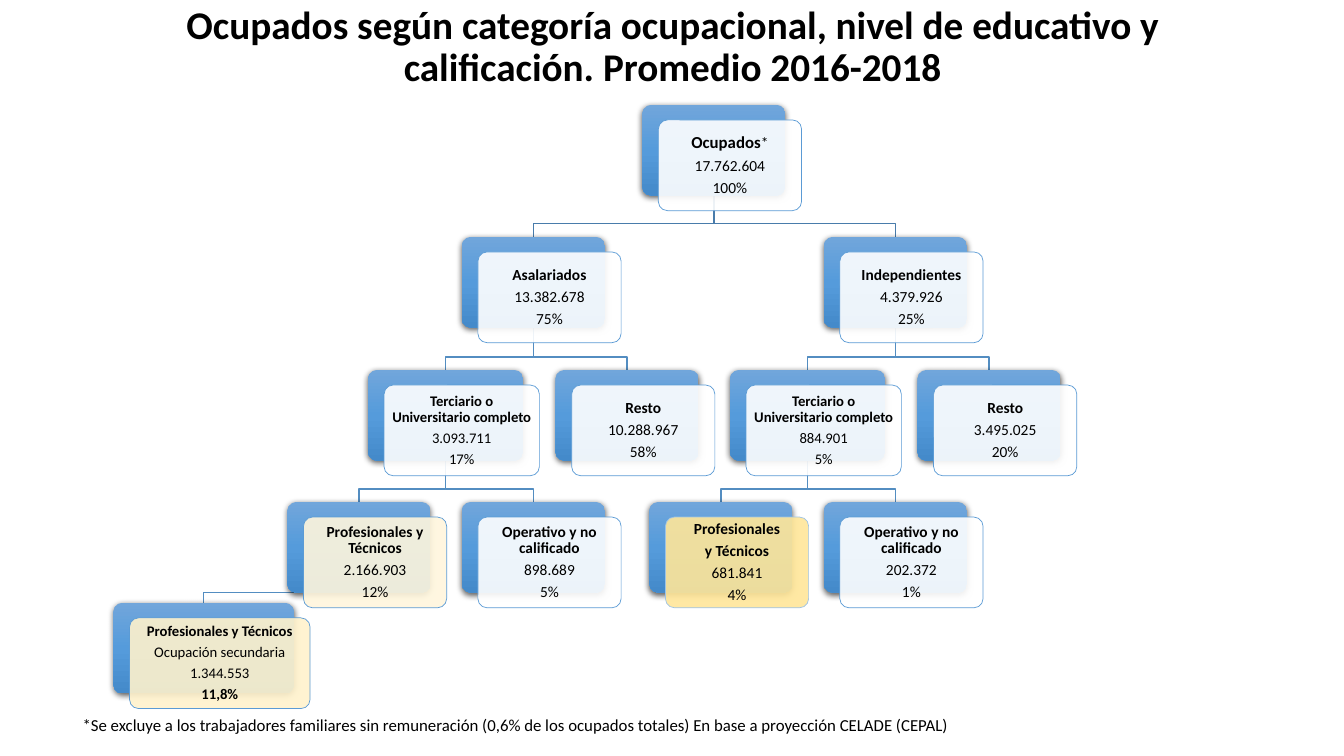
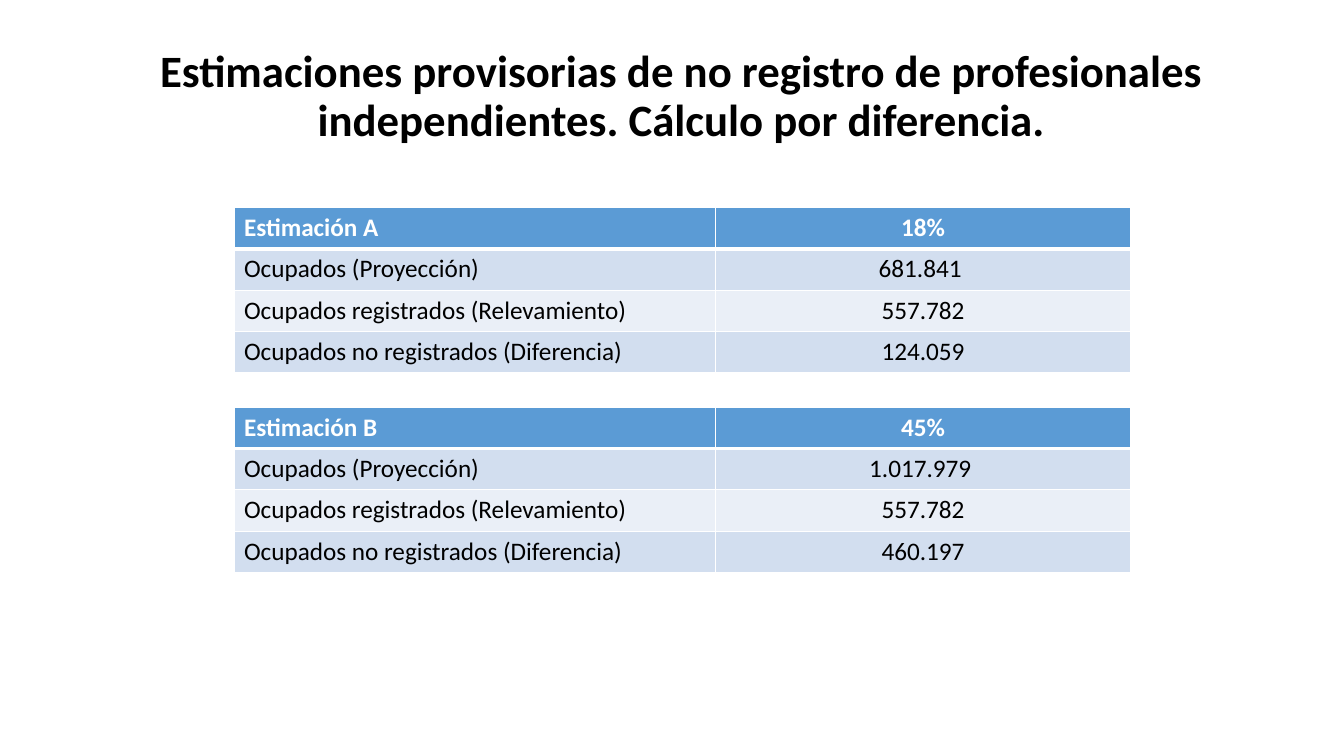
"""Build two slides on employed people: an occupation tree and two estimate tables."""
from copy import deepcopy
from typing import NamedTuple

from lxml import etree
from pptx import Presentation
from pptx import util as u
from pptx.dml.color import RGBColor
from pptx.enum import shapes, text
from pptx.oxml.ns import qn

FONT = "Calibri"
BLACK = RGBColor(0x00, 0x00, 0x00)
WHITE = RGBColor(0xFF, 0xFF, 0xFF)
BLUE = RGBColor(0x5B, 0x9B, 0xD5)
PALE_BLUE = RGBColor(0x9D, 0xC3, 0xE6)
BAND_DARK = RGBColor(0xD2, 0xDE, 0xEF)
BAND_LIGHT = RGBColor(0xEA, 0xEF, 0xF7)
CREAM = RGBColor(0xFF, 0xF6, 0xDD)
SAND = RGBColor(0xFF, 0xF2, 0xCC)
GOLD = RGBColor(0xFF, 0xE6, 0x99)
TOP_BRANCH = RGBColor(0x49, 0x7C, 0xAB)
BRANCH = RGBColor(0x53, 0x8D, 0xC1)
BACK_STOPS = (
    (0, RGBColor(0x71, 0xA6, 0xDB)),
    (0.5, RGBColor(0x55, 0x9B, 0xDB)),
    (1, RGBColor(0x44, 0x8A, 0xCA)),
)

LEVELS = (1.04, 2.35, 3.67, 4.98, 5.98)
BOX_HEIGHT = 0.9
CARD_SHIFT = (0.16, 0.15)
BEND_GAP = 0.13


class Group(NamedTuple):
    parent: int | None
    level: int
    center: float
    headings: tuple
    figures: tuple
    size: float = 11
    width: float = 1.42
    tint: RGBColor = WHITE
    edge: RGBColor = BLUE
    mark: str = ""
    closing: tuple = ()

    @property
    def top(self):
        return LEVELS[self.level]

    @property
    def bottom(self):
        return self.top + BOX_HEIGHT


TERTIARY = ("Terciario o Universitario completo",)
SKILLED = ("Profesionales y Técnicos",)
UNSKILLED = ("Operativo y no calificado",)
GROUPS = (
    Group(None, 0, 7.08, ("Ocupados",), ("17.762.604", "100%"), mark="*"),
    Group(0, 1, 5.29, ("Asalariados",), ("13.382.678", "75%")),
    Group(0, 1, 8.88, ("Independientes",), ("4.379.926", "25%")),
    Group(1, 2, 4.42, TERTIARY, ("3.093.711", "17%"), 10.5, 1.54),
    Group(1, 2, 6.22, ("Resto",), ("10.288.967", "58%")),
    Group(2, 2, 8.01, TERTIARY, ("884.901", "5%"), 10.5, 1.54),
    Group(2, 2, 9.81, ("Resto",), ("3.495.025", "20%")),
    Group(3, 3, 3.56, SKILLED, ("2.166.903", "12%"), tint=CREAM),
    Group(3, 3, 5.29, UNSKILLED, ("898.689", "5%")),
    Group(5, 3, 7.15, ("Profesionales", "y Técnicos"), ("681.841", "4%"),
          tint=GOLD, edge=PALE_BLUE),
    Group(5, 3, 8.88, UNSKILLED, ("202.372", "1%")),
    Group(7, 4, 2.02, SKILLED, ("Ocupación secundaria", "1.344.553"), 10.5, 1.79,
          SAND, closing=("11,8%",)),
)

ESTIMATE_LABELS = (
    "Ocupados (Proyección)",
    "Ocupados registrados (Relevamiento)",
    "Ocupados no registrados (Diferencia)",
)
ESTIMATES = (
    (2.06, ("Estimación A", "18%"), ("681.841 ", "557.782", "124.059")),
    (4.04, ("Estimación B", "45%"), ("1.017.979 ", "557.782", "460.197")),
)


class Deck:
    """Hold the shared style and the current slide."""

    def __init__(self):
        self.show = Presentation()
        self.show.slide_width = u.Inches(13.33)
        self.show.slide_height = u.Inches(7.5)
        self.slide = None

    def new_slide(self):
        """Start a blank slide."""
        self.slide = self.show.slides.add_slide(self.show.slide_layouts[6])

    def style(self, paragraph, size, bold=False, color=BLACK):
        """Format every run of a paragraph."""
        for run in paragraph.runs:
            run.font.name = FONT
            run.font.size = u.Pt(size)
            run.font.bold = bold
            run.font.color.rgb = color

    def label(self, place, wording, size):
        """Add a wrapped text box and return it."""
        box = self.slide.shapes.add_textbox(*map(u.Inches, place))
        box.text_frame.word_wrap = True
        box.text_frame.text = wording
        self.style(box.text_frame.paragraphs[0], size)
        return box

    def title(self, left, top, wording, size):
        """Add the centred bold heading."""
        frame = self.label((left, top, 11.5, 1.45), wording, size).text_frame
        frame.vertical_anchor = text.MSO_ANCHOR.MIDDLE
        heading = frame.paragraphs[0]
        heading.alignment = text.PP_ALIGN.CENTER
        heading.line_spacing = 0.9
        self.style(heading, size, True)

    def branch(self, parent, child):
        """Draw the bent line from a group to its subgroup."""
        bend = max(parent.bottom, child.top - BEND_GAP)
        points = [(u.Inches(x), u.Inches(y)) for x, y in (
            (parent.center, parent.bottom), (parent.center, bend),
            (child.center, bend), (child.center, child.top))]
        pen = self.slide.shapes.build_freeform(*points[0])
        pen.add_line_segments(points[1:], close=False)
        line = pen.convert_to_shape()
        line.shadow.inherit = False
        line.fill.background()
        line.line.color.rgb = BRANCH if parent.level else TOP_BRANCH
        line.line.width = u.Pt(1)

    def rounded(self, left, top, width):
        """Add a rounded box without shadow."""
        box = self.slide.shapes.add_shape(
            shapes.MSO_SHAPE.ROUNDED_RECTANGLE,
            *map(u.Inches, (left, top, width, BOX_HEIGHT)))
        box.adjustments[0] = 0.1
        box.shadow.inherit = False
        return box

    def backing(self, left, top, width):
        """Add the shaded box behind a card."""
        back = self.rounded(left, top, width)
        back.line.fill.background()
        back.fill.gradient()
        back.fill.gradient_angle = 270
        properties = back._element.spPr
        stops = properties.find(".//" + qn("a:gsLst"))
        stops.insert(1, deepcopy(stops[0]))
        for stop, (position, color) in zip(back.fill.gradient_stops, BACK_STOPS):
            stop.position = position
            stop.color.rgb = color
        shadow = etree.SubElement(
            properties.find(qn("a:effectLst")), qn("a:outerShdw"),
            blurRad="57150", dist="19050", dir="5400000", algn="ctr", rotWithShape="0")
        black = etree.SubElement(shadow, qn("a:srgbClr"), val=str(BLACK))
        etree.SubElement(black, qn("a:alpha"), val="63000")

    def group(self, group):
        """Add a backing box and the card with the group's figures."""
        left = group.center - group.width / 2
        self.backing(left, group.top, group.width)
        card = self.rounded(left + CARD_SHIFT[0], group.top + CARD_SHIFT[1], group.width)
        card.fill.solid()
        card.fill.fore_color.rgb = group.tint
        tint = card._element.spPr.find(qn("a:solidFill"))[0]
        etree.SubElement(tint, qn("a:alpha"), val="90000")
        card.line.color.rgb = group.edge
        card.line.width = u.Pt(0.5)
        self.card_text(card.text_frame, group)

    def card_text(self, frame, group):
        """Write headings in bold and figures in regular weight."""
        frame.word_wrap = True
        frame.vertical_anchor = text.MSO_ANCHOR.MIDDLE
        frame.margin_left = frame.margin_right = u.Inches(0.05)
        frame.margin_top = frame.margin_bottom = u.Inches(0.05)
        frame.text = "\n".join(group.headings + group.figures + group.closing)
        regular = range(len(group.headings), len(group.headings + group.figures))
        for index, paragraph in enumerate(frame.paragraphs):
            paragraph.alignment = text.PP_ALIGN.CENTER
            paragraph.line_spacing = 0.9
            paragraph.space_after = u.Pt(0.35 * group.size)
            self.style(paragraph, group.size, index not in regular)
        if group.mark:
            heading = frame.paragraphs[0]
            heading.add_run().text = group.mark
            self.style(heading, group.size)
            heading.runs[0].font.size = u.Pt(12)
            heading.runs[0].font.bold = True

    def borders(self, cell, bottom):
        """Draw white cell borders."""
        properties = cell._tc.get_or_add_tcPr()
        for side, points in (("L", 1), ("R", 1), ("T", 1), ("B", bottom)):
            edge = etree.SubElement(properties, qn("a:ln" + side), w=str(u.Pt(points)))
            fill = etree.SubElement(edge, qn("a:solidFill"))
            etree.SubElement(fill, qn("a:srgbClr"), val=str(WHITE))

    def estimate(self, top, header, values):
        """Add a two-column table with a blue header and banded rows."""
        rows = [header, *zip(ESTIMATE_LABELS, values)]
        row_height = 0.41
        table = self.slide.shapes.add_table(
            len(rows), 2, u.Inches(2.32), u.Inches(top),
            u.Inches(8.89), u.Inches(row_height * len(rows))).table
        for column, width in zip(table.columns, (4.78, 4.11)):
            column.width = u.Inches(width)
        for index, entries in enumerate(rows):
            is_header = index == 0
            band = BLUE if is_header else (BAND_LIGHT, BAND_DARK)[index % 2]
            table.rows[index].height = u.Inches(row_height)
            for column, entry in enumerate(entries):
                cell = table.cell(index, column)
                self.borders(cell, 3 if is_header else 1)
                cell.fill.solid()
                cell.fill.fore_color.rgb = band
                cell.text_frame.text = entry
                paragraph = cell.text_frame.paragraphs[0]
                if column:
                    paragraph.alignment = text.PP_ALIGN.CENTER
                self.style(paragraph, 18, is_header, WHITE if is_header else BLACK)


def main():
    deck = Deck()

    deck.new_slide()
    deck.title(0.92, -0.25, "Ocupados según categoría ocupacional, nivel de educativo y "
               "calificación. Promedio 2016-2018", 28)
    for group in GROUPS:
        if group.parent is not None:
            deck.branch(GROUPS[group.parent], group)
    for group in GROUPS:
        deck.group(group)
    deck.label((0.72, 7.04, 9.89, 0.3), "*Se excluye a los trabajadores familiares sin "
               "remuneración (0,6% de los ocupados totales) En base a proyección "
               "CELADE (CEPAL)", 12)

    deck.new_slide()
    deck.title(1.01, 0.24, "Estimaciones provisorias de no registro de profesionales "
               "independientes. Cálculo por diferencia.", 32)
    for estimate in ESTIMATES:
        deck.estimate(*estimate)

    deck.show.save("out.pptx")


if __name__ == "__main__":
    main()
